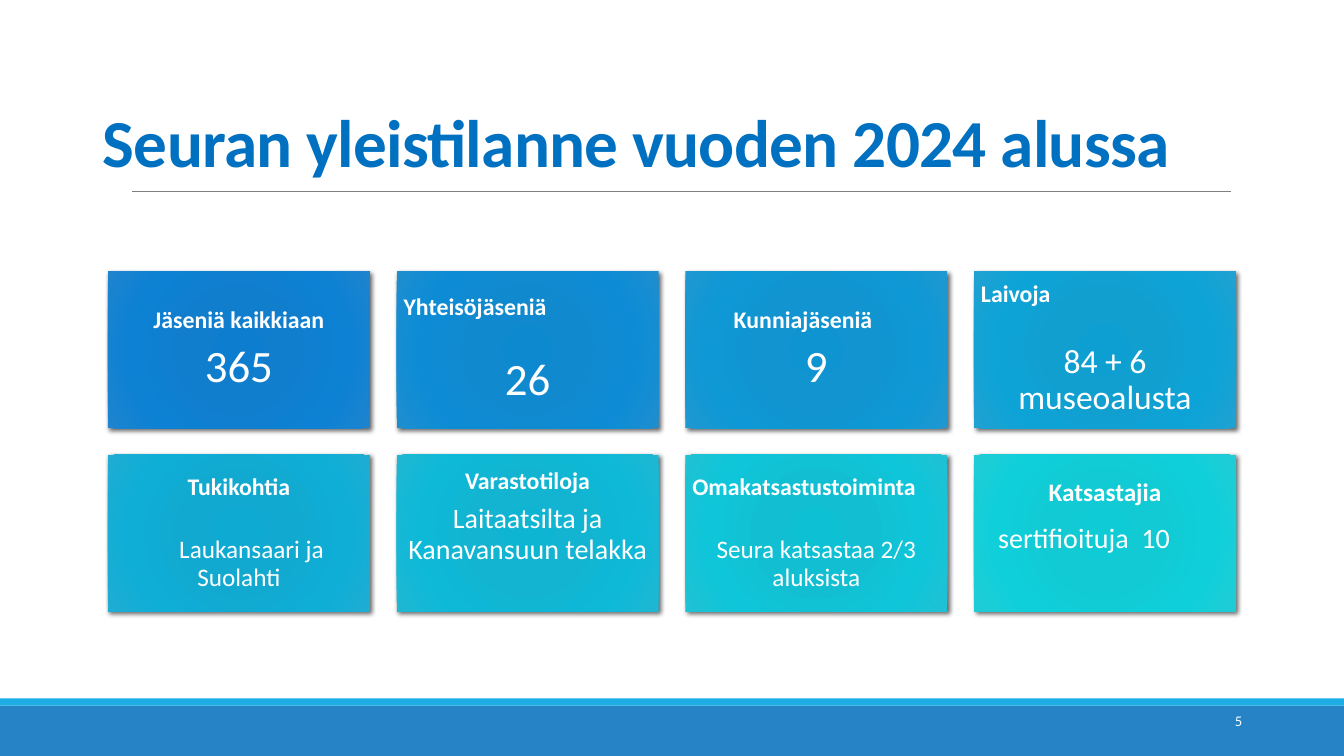
from dataclasses import dataclass

import pptx
import pptx.dml.color
import pptx.enum.shapes
import pptx.enum.text
import pptx.oxml
import pptx.oxml.ns
import pptx.util

Inches = pptx.util.Inches
Pt = pptx.util.Pt
ALIGN = pptx.enum.text.PP_ALIGN
ANCHOR = pptx.enum.text.MSO_ANCHOR

FONT = "Calibri"
COLORS = {
    "title": "0070C0",
    "rule": "808080",
    "band": "2683C6",
    "stripe": "1CADE4",
    "text": "FFFFFF",
    "shadow": "000000",
}
FIRST_GRADIENT = {0: "0D7ECF", 34: "117ECD", 70: "0D81D4", 100: "1E84CE"}
LAST_GRADIENT = {0: "0ECBD5", 34: "12CAD3", 70: "0FD0DA", 100: "20CBD4"}

COLUMNS = 4
GRID_LEFT, GRID_TOP = 1.07, 2.69
CARD_WIDTH, CARD_HEIGHT = 2.6, 1.56
COLUMN_PITCH = (9.66 - GRID_LEFT) / (COLUMNS - 1)
ROW_PITCH = 1.82
INSET = 0.07


@dataclass(frozen=True)
class Line:
    text: str
    size: float
    align: ALIGN = ALIGN.CENTER
    margin: float = 0
    indent: float = 0


@dataclass(frozen=True)
class Card:
    heading: Line
    body: Line
    gap: float = 7
    lift: float = 0


CARDS = [
    Card(Line("Jäseniä kaikkiaan", 17), Line("365", 32)),
    Card(Line("Yhteisöjäseniä", 17, ALIGN.LEFT), Line("26", 32), gap=26),
    Card(Line("Kunniajäseniä", 17, ALIGN.LEFT, margin=0.41), Line("9", 32)),
    Card(Line("Laivoja", 17, ALIGN.LEFT), Line("84 + 6 museoalusta", 24), gap=26),
    Card(Line("Tukikohtia", 17), Line("Laukansaari ja Suolahti", 18, indent=0.25), gap=26),
    Card(Line("Varastotiloja", 17), Line("Laitaatsilta ja Kanavansuun telakka", 20), lift=0.32),
    Card(Line("Omakatsastustoiminta", 17, ALIGN.LEFT),
         Line("Seura katsastaa 2/3 aluksista", 18), gap=26),
    Card(Line("Katsastajia", 18),
         Line("sertifioituja  10", 20, ALIGN.LEFT, margin=0.17), gap=12.5, lift=0.32),
]


def rgb(name: str) -> pptx.dml.color.RGBColor:
    return pptx.dml.color.RGBColor.from_string(COLORS[name])


def blend(start: str, end: str, share: float) -> str:
    pairs = ((int(start[i:i + 2], 16), int(end[i:i + 2], 16)) for i in (0, 2, 4))
    return "".join(f"{round(a + (b - a) * share):02X}" for a, b in pairs)


def style_paragraph(paragraph, size: float, color: str, bold: bool = False) -> None:
    paragraph.font.name = FONT
    paragraph.font.size = Pt(size)
    paragraph.font.bold = bold
    paragraph.font.color.rgb = rgb(color)


def add_block(slide, left: float, top: float, width: float, height: float):
    block = slide.shapes.add_shape(
        pptx.enum.shapes.MSO_SHAPE.RECTANGLE,
        Inches(left), Inches(top), Inches(width), Inches(height))
    block.shadow.inherit = False
    block.line.fill.background()
    return block


def add_bar(slide, top: float, height: float, color: str) -> None:
    bar = add_block(slide, 0, top, 13.33, height)
    bar.fill.solid()
    bar.fill.fore_color.rgb = rgb(color)


def apply_glow(block, share: float) -> None:
    namespace = pptx.oxml.ns.nsdecls("a")
    stops = "".join(
        f'<a:gs pos="{position * 1000}"><a:srgbClr val="'
        f'{blend(color, LAST_GRADIENT[position], share)}"/></a:gs>'
        for position, color in FIRST_GRADIENT.items())
    gradient = pptx.oxml.parse_xml(
        f'<a:gradFill {namespace} rotWithShape="1"><a:gsLst>{stops}</a:gsLst>'
        '<a:path path="circle"><a:fillToRect l="100000" t="100000" r="100000" b="100000"/>'
        '</a:path></a:gradFill>')
    shadow = pptx.oxml.parse_xml(
        f'<a:outerShdw {namespace} blurRad="{Pt(3.5)}" dist="{Pt(2)}" dir="2700000" '
        f'algn="br" rotWithShape="0"><a:srgbClr val="{COLORS["shadow"]}">'
        '<a:alpha val="60000"/></a:srgbClr></a:outerShdw>')
    block.fill.background()
    properties = block._element.spPr
    properties.replace(properties.find(pptx.oxml.ns.qn("a:noFill")), gradient)
    properties.find(pptx.oxml.ns.qn("a:effectLst")).append(shadow)


def write_line(paragraph, line: Line, bold: bool) -> None:
    paragraph.text = line.text
    paragraph.alignment = line.align
    paragraph.line_spacing = 0.9
    properties = paragraph._p.get_or_add_pPr()
    properties.set("marL", str(Inches(line.margin)))
    properties.set("indent", str(Inches(line.indent)))
    style_paragraph(paragraph, line.size, "text", bold)


def add_card(slide, card: Card, index: int) -> None:
    row, column = divmod(index, COLUMNS)
    block = add_block(slide, GRID_LEFT + column * COLUMN_PITCH,
                      GRID_TOP + row * ROW_PITCH, CARD_WIDTH, CARD_HEIGHT)
    apply_glow(block, index / (len(CARDS) - 1))
    frame = block.text_frame
    frame.word_wrap = True
    frame.vertical_anchor = ANCHOR.MIDDLE
    frame.margin_left = frame.margin_right = frame.margin_top = Inches(INSET)
    frame.margin_bottom = Inches(INSET + card.lift)
    write_line(frame.paragraphs[0], card.heading, True)
    frame.paragraphs[0].space_after = Pt(card.gap)
    write_line(frame.add_paragraph(), card.body, False)


def add_title(slide) -> None:
    title = slide.shapes.title
    title.left, title.top = Inches(0.92), Inches(0.4)
    title.width, title.height = Inches(11.5), Inches(1.45)
    frame = title.text_frame
    frame.text = "Seuran yleistilanne vuoden 2024 alussa"
    frame.word_wrap = True
    frame.auto_size = pptx.enum.text.MSO_AUTO_SIZE.NONE
    frame.vertical_anchor = ANCHOR.BOTTOM
    heading = frame.paragraphs[0]
    heading.alignment = ALIGN.LEFT
    heading.line_spacing = 0.85
    style_paragraph(heading, 48, "title", True)
    heading.runs[0]._r.get_or_add_rPr().set("spc", "-50")


def add_rule(slide) -> None:
    rule = slide.shapes.add_connector(
        pptx.enum.shapes.MSO_CONNECTOR.STRAIGHT,
        Inches(1.31), Inches(1.9), Inches(12.21), Inches(1.9))
    rule.line.color.rgb = rgb("rule")
    rule.line.width = Pt(0.5)
    rule._element.spPr.append(pptx.oxml.parse_xml(
        f'<a:effectLst {pptx.oxml.ns.nsdecls("a")}/>'))


def add_page_number(slide) -> None:
    frame = slide.shapes.add_textbox(
        Inches(9.42), Inches(6.95), Inches(3), Inches(0.4)).text_frame
    frame.text = "5"
    frame.word_wrap = True
    frame.vertical_anchor = ANCHOR.MIDDLE
    frame.paragraphs[0].alignment = ALIGN.RIGHT
    style_paragraph(frame.paragraphs[0], 10.5, "text")


def main() -> None:
    presentation = pptx.Presentation()
    presentation.slide_width = Inches(13.33)
    presentation.slide_height = Inches(7.5)
    slide = presentation.slides.add_slide(presentation.slide_layouts[5])
    add_bar(slide, 7, 0.5, "band")
    add_bar(slide, 6.93, 0.07, "stripe")
    add_rule(slide)
    add_title(slide)
    add_page_number(slide)
    for index, card in enumerate(CARDS):
        add_card(slide, card, index)
    presentation.save("out.pptx")


if __name__ == "__main__":
    main()
